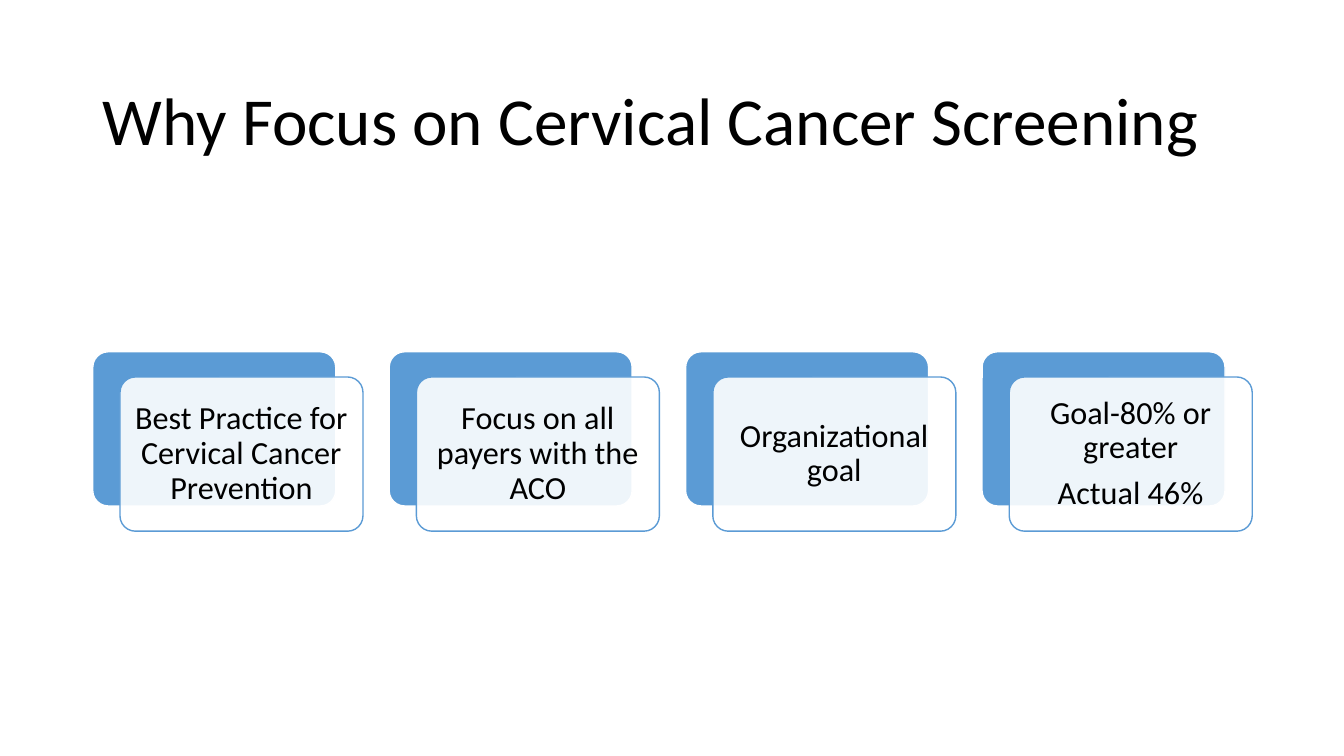
from lxml import etree
from pptx import Presentation
from pptx.dml.color import RGBColor
from pptx.enum.shapes import MSO_SHAPE
from pptx.enum.text import MSO_ANCHOR, PP_ALIGN
from pptx.oxml.ns import qn
from pptx.util import Inches, Pt

# Content
TITLE = "Why Focus on Cervical Cancer Screening"
REASONS = [
    ["Best Practice for Cervical Cancer Prevention"],
    ["Focus on all payers with the ACO"],
    ["Organizational goal"],
    ["Goal-80% or greater", "Actual 46%"],
]

# Style and layout, lengths in inches
COLORS = {"text": "000000", "blue": "5B9BD5", "white": "FFFFFF"}
FONT = "Calibri"
LEFT, TOP = 0.92, 3.49
CARD_W, CARD_H = 2.41, 1.53
PITCH = 2.94
SHIFT_X, SHIFT_Y = 0.27, 0.25
INSET = 0.1


def color(name):
    return RGBColor.from_string(COLORS[name])


def write(frame, lines, size, align, space_after=0):
    frame.word_wrap = True
    frame.vertical_anchor = MSO_ANCHOR.MIDDLE
    frame.text = "\n".join(lines)
    for paragraph in frame.paragraphs:
        paragraph.alignment = align
        paragraph.line_spacing = 0.9
        paragraph.space_after = Pt(space_after)
        for run in paragraph.runs:
            run.font.name = FONT
            run.font.size = Pt(size)
            run.font.color.rgb = color("text")


def add_card(left, top, fill, line):
    card = slide.shapes.add_shape(
        MSO_SHAPE.ROUNDED_RECTANGLE,
        Inches(left), Inches(top), Inches(CARD_W), Inches(CARD_H))
    card.adjustments[0] = 0.1
    card.shadow.inherit = False
    card.fill.solid()
    card.fill.fore_color.rgb = color(fill)
    card.line.color.rgb = color(line)
    card.line.width = Pt(1)
    return card


def set_opacity(shape, percent):
    fill_color = shape.fill._xPr.find(qn("a:solidFill"))[0]
    etree.SubElement(fill_color, qn("a:alpha"), val=str(percent * 1000))


presentation = Presentation()
presentation.slide_width = Inches(13.33)
presentation.slide_height = Inches(7.5)
slide = presentation.slides.add_slide(presentation.slide_layouts[6])

# Title
title = slide.shapes.add_textbox(
    Inches(LEFT), Inches(0.61), Inches(11.5), Inches(1.24))
write(title.text_frame, [TITLE], 48, PP_ALIGN.LEFT)

# Row of reasons: a blue card behind a translucent white one
for index, lines in enumerate(REASONS):
    left = LEFT + index * PITCH
    add_card(left, TOP, "blue", "white")
    reason = add_card(left + SHIFT_X, TOP + SHIFT_Y, "white", "blue")
    set_opacity(reason, 90)
    frame = reason.text_frame
    frame.margin_left = frame.margin_right = Inches(INSET)
    frame.margin_top = frame.margin_bottom = Inches(INSET)
    write(frame, lines, 23, PP_ALIGN.CENTER, space_after=8)

presentation.save("out.pptx")
